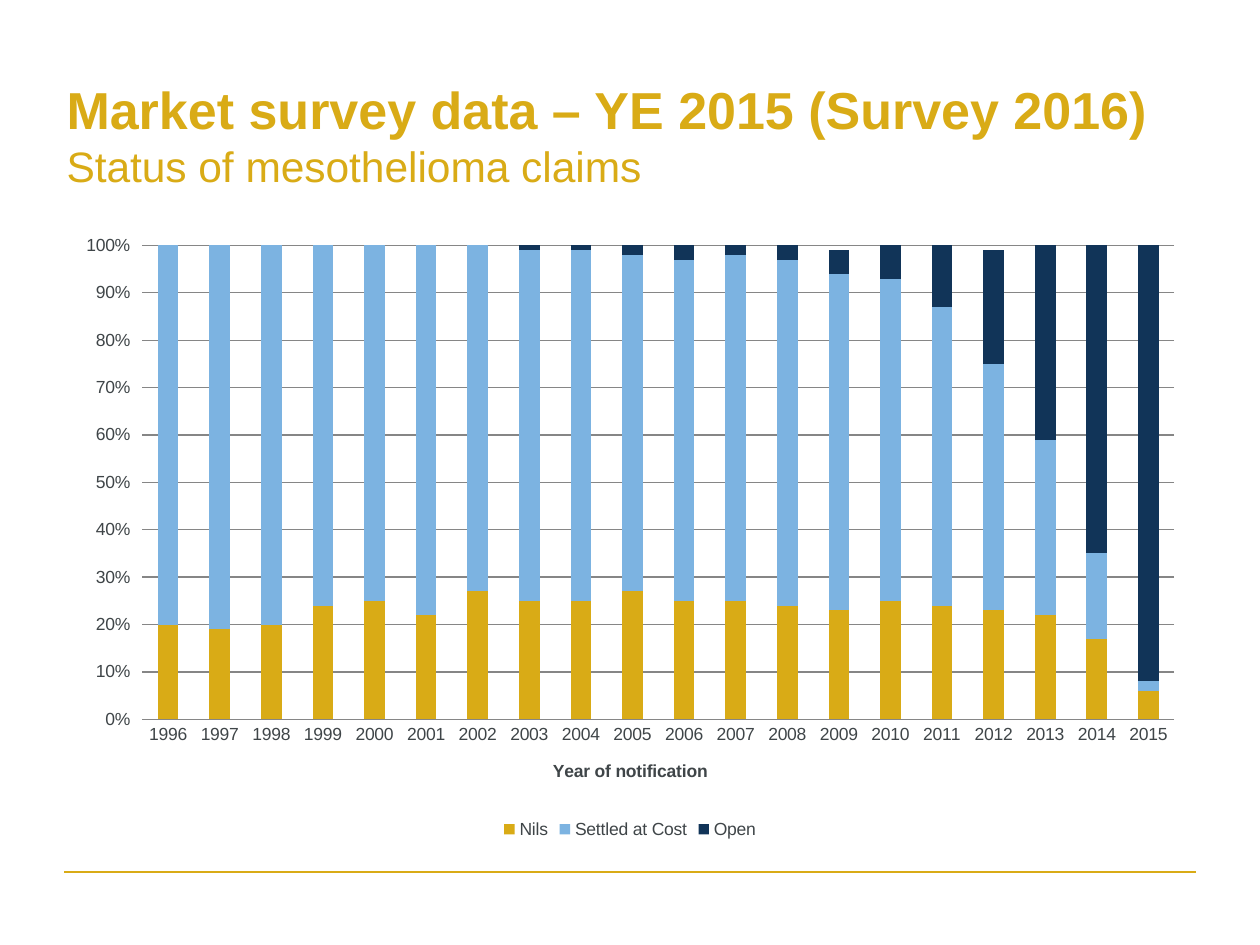
from lxml import etree
from pptx import Presentation
from pptx.chart import data as cd
from pptx.dml.color import RGBColor
from pptx.enum import chart as ce, shapes, text
from pptx.oxml import parse_xml
from pptx.oxml.ns import nsdecls, qn
from pptx.util import Inches, Pt

GOLD = RGBColor(0xD9, 0xAB, 0x16)
SKY = RGBColor(0x7C, 0xB3, 0xE1)
NAVY = RGBColor(0x11, 0x34, 0x58)
INK = RGBColor(0x3F, 0x45, 0x48)
GREY = RGBColor(0x86, 0x86, 0x86)

YEARS = [str(y) for y in range(1996, 2016)]
CLAIMS = [
    ("Nils", GOLD, [.2, .19, .2, .24, .25, .22, .27, .25, .25, .27,
                    .25, .25, .24, .23, .25, .24, .23, .22, .17, .06]),
    ("Settled at Cost", SKY, [.8, .81, .8, .76, .75, .78, .73, .74, .74, .71,
                              .72, .73, .73, .71, .68, .63, .52, .37, .18, .02]),
    ("Open", NAVY, [0, .01, 0, 0, 0, 0, 0, .01, .01, .03,
                    .03, .02, .04, .05, .07, .13, .24, .41, .65, .92]),
]


def add_title(slide, x, y, w, h):
    frame = slide.shapes.add_textbox(x, y, w, h).text_frame
    frame.word_wrap = True
    frame.vertical_anchor = text.MSO_ANCHOR.MIDDLE
    para = frame.paragraphs[0]
    para.font.name = "Arial"
    para.font.color.rgb = GOLD
    head = para.add_run()
    head.text = "Market survey data – YE 2015 (Survey 2016)"
    head.font.size, head.font.bold = Pt(29.7), True
    para.add_line_break()
    sub = para.add_run()
    sub.text = "Status of mesothelioma claims"
    sub.font.size = Pt(24.3)
    for run in (head, sub):
        run.font.name = "Arial"
        run.font.color.rgb = GOLD


def set_plot(chart, x, y, w, h):
    """Fix the inner plot area, as fractions of the chart."""
    area = chart.plots[0]._element.getparent()
    for old in area.findall(qn("c:layout")):
        area.remove(old)
    layout = parse_xml(f"<c:layout {nsdecls('c')}><c:manualLayout/></c:layout>")
    parts = [("layoutTarget", "inner"), ("xMode", "edge"), ("yMode", "edge"),
             ("x", x), ("y", y), ("w", w), ("h", h)]
    for tag, val in parts:
        etree.SubElement(layout[0], qn("c:" + tag)).set("val", str(val))
    area.insert(0, layout)


def add_status(slide, x, y, w, h):
    data = cd.CategoryChartData(number_format="0%")
    data.categories = YEARS
    for name, _, vals in CLAIMS:
        data.add_series(name, vals)
    chart = slide.shapes.add_chart(
        ce.XL_CHART_TYPE.COLUMN_STACKED, x, y, w, h, data).chart
    chart.has_title = False
    chart.font.name, chart.font.size = "Arial", Pt(10)
    chart.font.color.rgb = INK

    # Columns
    plot = chart.plots[0]
    plot.gap_width, plot.overlap = 150, 100
    plot.vary_by_categories = False
    for series, (_, color, _) in zip(plot.series, CLAIMS):
        series.format.fill.solid()
        series.format.fill.fore_color.rgb = color
        series.invert_if_negative = False

    # Axes
    cat, val = chart.category_axis, chart.value_axis
    cat.major_tick_mark = ce.XL_TICK_MARK.NONE
    frame = cat.axis_title.text_frame
    frame.text = "Year of notification"
    font = frame.paragraphs[0].font
    font.name, font.size, font.bold = "Arial", Pt(10), True
    font.color.rgb = INK
    val.minimum_scale, val.maximum_scale, val.major_unit = 0, 1, 0.1
    val.major_tick_mark = ce.XL_TICK_MARK.OUTSIDE
    val.tick_labels.number_format = "0%"
    val.tick_labels.number_format_is_linked = False
    val.format.line.fill.background()
    val.has_major_gridlines = True
    for line in (cat.format.line, val.major_gridlines.format.line):
        line.color.rgb, line.width = GREY, Pt(0.75)

    # Legend and plot area
    chart.has_legend = True
    chart.legend.position = ce.XL_LEGEND_POSITION.BOTTOM
    chart.legend.include_in_layout = False
    set_plot(chart, 0.07, 0.04, 0.91, 0.76)


def add_rule(slide, x, y, w):
    rule = slide.shapes.add_connector(
        shapes.MSO_CONNECTOR.STRAIGHT, x, y, x + w, y)
    rule.line.color.rgb, rule.line.width = GOLD, Pt(1)
    etree.SubElement(rule._element.spPr, qn("a:effectLst"))


def main():
    deck = Presentation()
    deck.slide_width, deck.slide_height = Inches(10), Inches(7.5)
    slide = deck.slides.add_slide(deck.slide_layouts[6])
    add_rule(slide, Inches(0.51), Inches(6.92), Inches(8.98))
    add_title(slide, Inches(0.43), Inches(0.44), Inches(9.07), Inches(1.25))
    add_status(slide, Inches(0.5), Inches(1.75), Inches(9), Inches(4.95))
    deck.save("out.pptx")


if __name__ == "__main__":
    main()
